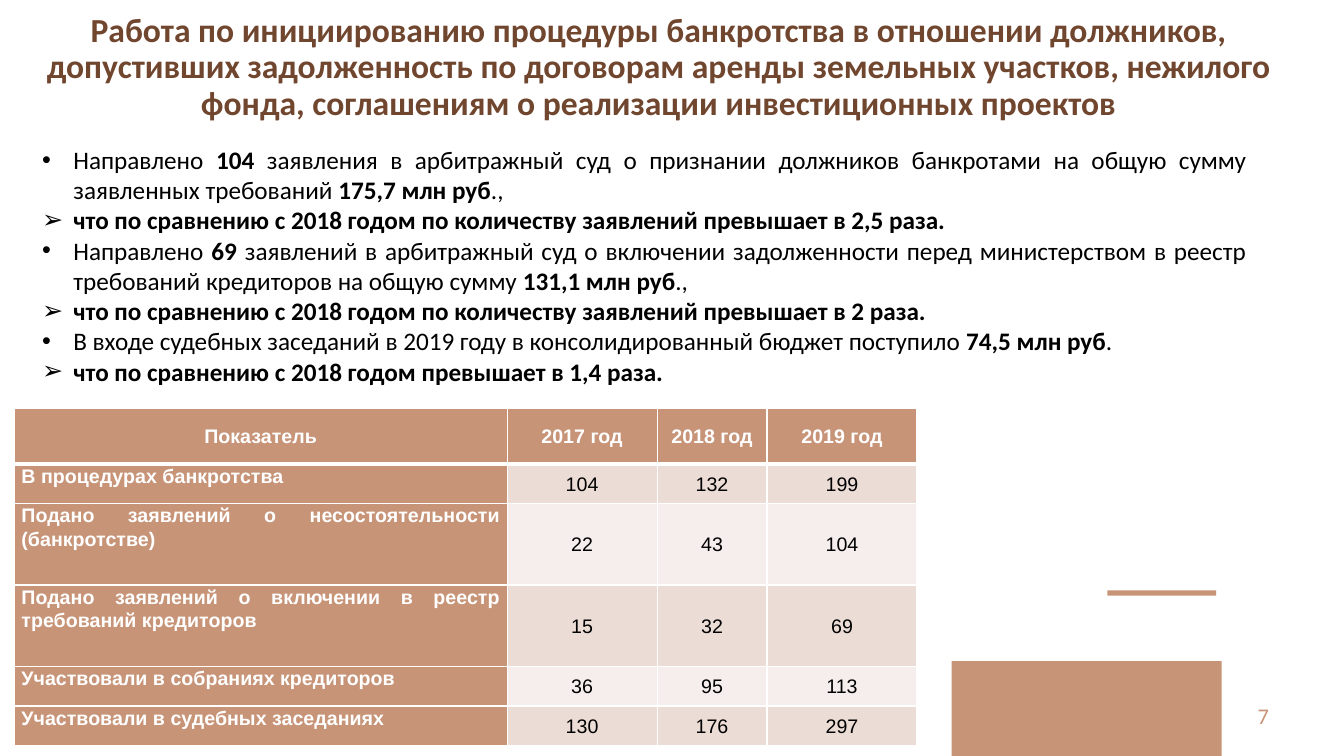
from lxml import etree
from pptx import Presentation
from pptx import util as u
from pptx.dml import color
from pptx.enum import shapes, text
from pptx.oxml import ns

COPPER = color.RGBColor(0xC7, 0x94, 0x78)
BROWN = color.RGBColor(0x71, 0x46, 0x2F)
BLACK = color.RGBColor(0, 0, 0)
WHITE = color.RGBColor(255, 255, 255)
BANDS = [color.RGBColor(0xEB, 0xDC, 0xD6), color.RGBColor(0xF5, 0xEE, 0xEC)]

TITLE = (
    "**Работа по инициированию процедуры банкротства в отношении должников, "
    "допустивших задолженность по договорам аренды земельных участков, нежилого "
    "фонда, соглашениям о реализации инвестиционных проектов**"
)
POINTS = [
    ("•", "Направлено **104 **заявления в арбитражный суд о признании должников "
          "банкротами на общую сумму заявленных требований **175,7 млн руб**.,"),
    ("➢", "**что по сравнению с 2018 годом по количеству заявлений превышает в 2,5 раза.**"),
    ("•", "Направлено **69** заявлений в арбитражный суд о включении задолженности "
          "перед министерством в реестр требований кредиторов на общую сумму "
          "**131,1 млн руб**.,"),
    ("➢", "**что по сравнению с 2018 годом по количеству заявлений превышает в 2 раза.**"),
    ("•", "В входе судебных заседаний в 2019 году в консолидированный бюджет "
          "поступило **74,5 млн руб**."),
    ("➢", "**что по сравнению с 2018 годом превышает в 1,4 раза.**"),
]
ROWS = [
    ("Показатель", "2017 год", "2018 год", "2019 год"),
    ("В процедурах банкротства", 104, 132, 199),
    ("Подано заявлений о несостоятельности (банкротстве)", 22, 43, 104),
    ("Подано заявлений о включении в реестр требований кредиторов", 15, 32, 69),
    ("Участвовали в собраниях кредиторов", 36, 95, 113),
    ("Участвовали в судебных заседаниях", 130, 176, 297),
]
COL_WIDTHS = [12.42, 3.78, 2.77, 3.78]
ROW_HEIGHTS = [1.4, 0.99, 2.06, 2.06, 0.99, 0.99]


def apply(target, **values):
    for name, value in values.items():
        setattr(target, name, value)


class Deck:
    font = "Calibri"
    table_font = "Arial"

    def __init__(self, width, height):
        self.prs = Presentation()
        apply(self.prs, slide_width=u.Cm(width), slide_height=u.Cm(height))
        self.s = self.prs.slides.add_slide(self.prs.slide_layouts[6])

    def block(self, *box):
        sp = self.s.shapes.add_shape(shapes.MSO_SHAPE.RECTANGLE, *map(u.Cm, box))
        sp.shadow.inherit = False
        sp.fill.solid()
        sp.fill.fore_color.rgb = COPPER
        sp.line.fill.background()

    def paragraph(self, p, marked, rgb, size, font, **fmt):
        apply(p, **fmt)
        for i, part in enumerate(marked.split("**")):
            if part:
                r = p.add_run()
                r.text = part
                apply(r.font, name=font, size=u.Pt(size), bold=i % 2 == 1)
                r.font.color.rgb = rgb

    def bullet(self, p, char, indent):
        pPr = p._p.get_or_add_pPr()
        pPr.set("marL", str(u.Cm(indent)))
        pPr.set("indent", str(-u.Cm(indent)))
        etree.SubElement(pPr, ns.qn("a:buFont"), typeface="Arial")
        etree.SubElement(pPr, ns.qn("a:buChar"), char=char)

    def textbox(self, box, paragraphs, rgb, size, anchor, **fmt):
        tf = self.s.shapes.add_textbox(*map(u.Cm, box)).text_frame
        apply(tf, word_wrap=True, vertical_anchor=anchor)
        for i, (char, marked) in enumerate(paragraphs):
            p = tf.add_paragraph() if i else tf.paragraphs[0]
            if char:
                self.bullet(p, char, 0.79)
            self.paragraph(p, marked, rgb, size, self.font, **fmt)

    def border(self, cell, side, width):
        ln = etree.SubElement(cell._tc.get_or_add_tcPr(), ns.qn("a:ln" + side),
                              w=str(u.Pt(width)))
        fill = etree.SubElement(ln, ns.qn("a:solidFill"))
        etree.SubElement(fill, ns.qn("a:srgbClr"), val=str(WHITE))

    def cell(self, cell, value, row, col):
        head, label = row == 0, col == 0
        thick = {(0, "B"), (1, "T")}
        for side in "LRTB":
            self.border(cell, side, 3 if (row, side) in thick else 1)
        strong = head or label
        cell.fill.solid()
        cell.fill.fore_color.rgb = COPPER if strong else BANDS[(row - 1) % 2]
        justified = label and not head
        apply(cell, margin_left=u.Cm(0.18), margin_right=u.Cm(0.18),
              margin_top=0, margin_bottom=0,
              vertical_anchor=text.MSO_ANCHOR.TOP if justified else text.MSO_ANCHOR.MIDDLE)
        self.paragraph(cell.text_frame.paragraphs[0],
                       f"**{value}**" if strong else str(value),
                       WHITE if strong else BLACK, 14, self.table_font,
                       alignment=text.PP_ALIGN.JUSTIFY if justified else text.PP_ALIGN.CENTER,
                       line_spacing=1.07, space_after=u.Pt(8))

    def table(self, left, top, rows, widths, heights):
        box = map(u.Cm, (left, top, sum(widths), sum(heights)))
        tbl = self.s.shapes.add_table(len(rows), len(widths), *box).table
        for col, width in zip(tbl.columns, widths):
            col.width = u.Cm(width)
        for i, (values, height) in enumerate(zip(rows, heights)):
            tbl.rows[i].height = u.Cm(height)
            for j, value in enumerate(values):
                self.cell(tbl.cell(i, j), value, i, j)


def main():
    deck = Deck(33.87, 19.05)
    deck.block(23.98, 16.66, 6.81, 2.39)
    deck.block(27.91, 14.88, 2.74, 0.13)
    deck.textbox((0.56, 0.28, 32.08, 2.87), [(None, TITLE)], BROWN, 24,
                 text.MSO_ANCHOR.MIDDLE, alignment=text.PP_ALIGN.CENTER, line_spacing=0.9)
    deck.textbox((24.61, 17.53, 7.62, 1.02), [(None, "7")], COPPER, 16,
                 text.MSO_ANCHOR.MIDDLE, alignment=text.PP_ALIGN.RIGHT)
    deck.table(0.36, 10.29, ROWS, COL_WIDTHS, ROW_HEIGHTS)
    deck.textbox((0.81, 3.51, 30.86, 6.4), POINTS, BLACK, 18,
                 text.MSO_ANCHOR.TOP, alignment=text.PP_ALIGN.JUSTIFY)
    deck.prs.save("out.pptx")


if __name__ == "__main__":
    main()
